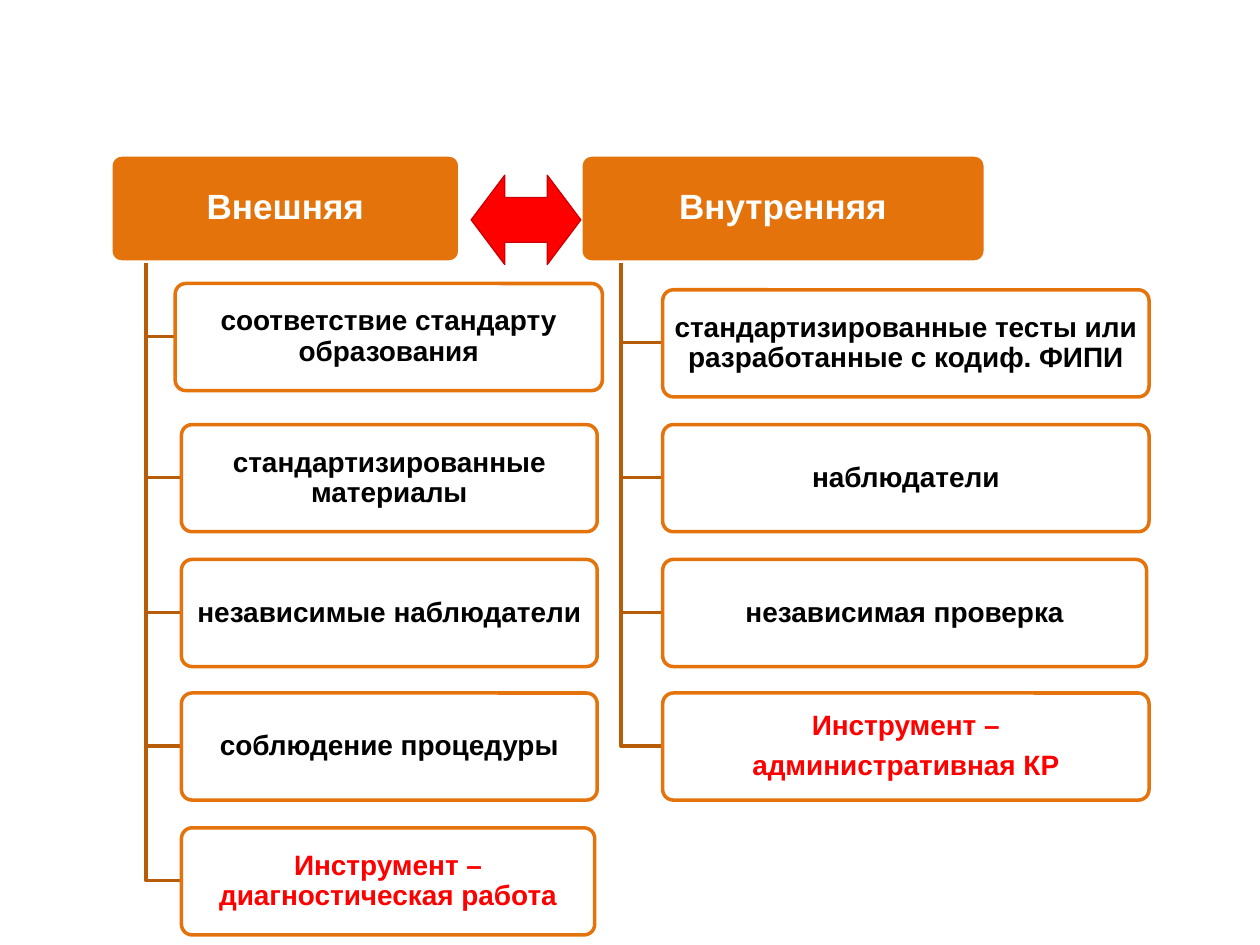
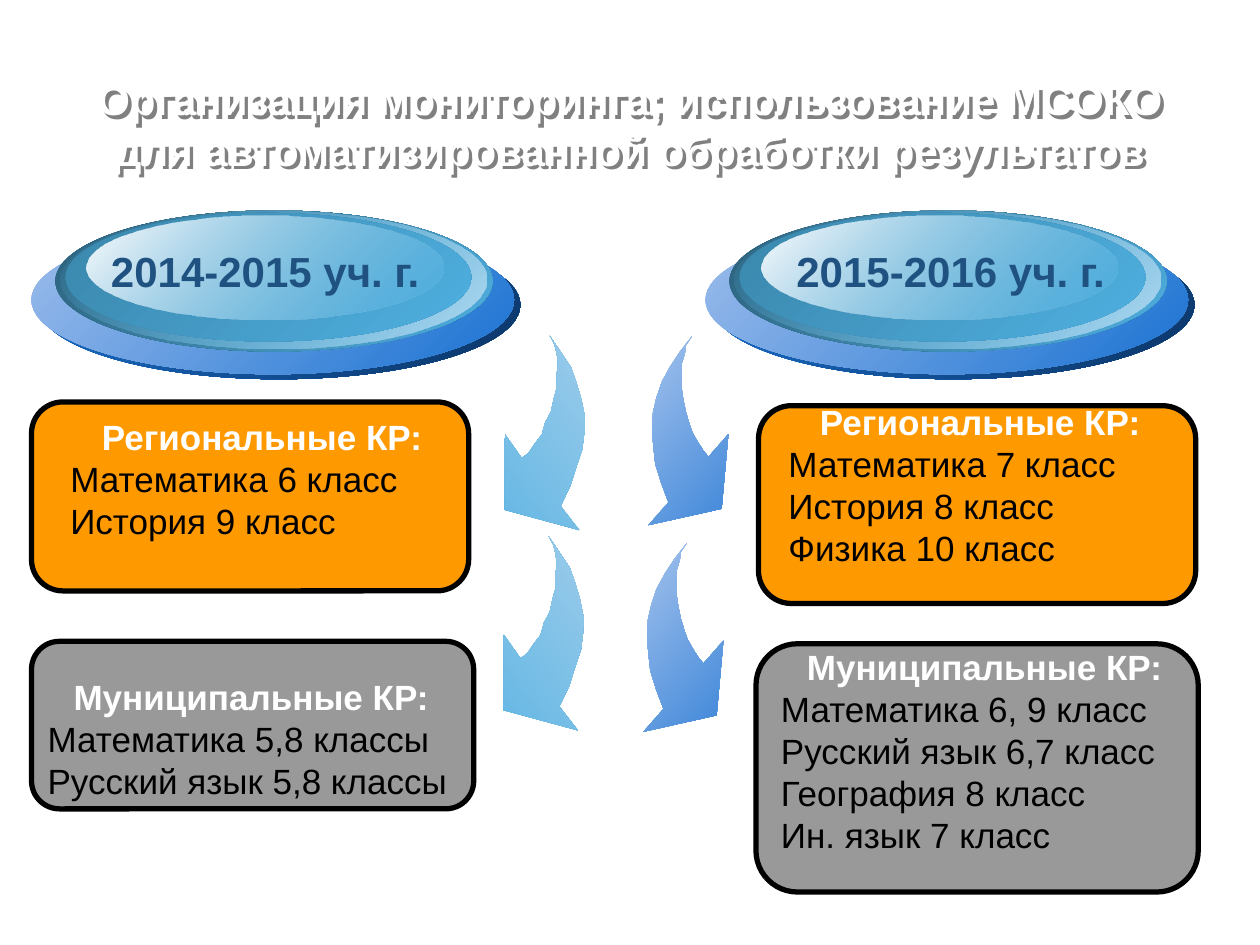
import math

from lxml import etree
from pptx import Presentation, util as u
from pptx.dml.color import RGBColor
from pptx.enum import shapes, text
from pptx.oxml import ns

PX = 9144
FACE = "Arial"
HUE = {
    "white": "FFFFFF", "black": "000000", "red": "FF0000", "rim": "CC0000",
    "orange": "E5730B", "stem": "B75C09", "amber": "FF9900", "grey": "999999",
    "navy": "1F5281", "shade": "808080", "sky": "4FB0E1", "pale": "ADD1ED",
    "mist": "C0D2F2", "deep": "1A72D2", "dark": "0C3566",
    "haze": "9DBDEC", "teal": "2A5E78", "ice": "B5DBF0", "sea": "3A86AB",
}
KIND = shapes.MSO_SHAPE
MID = text.PP_ALIGN.CENTER
LEFT = text.PP_ALIGN.LEFT

RINGS = [
    ((5, 16, 383, 118), ("deep", 100), ("dark", 100)),
    ((0, 12, 383, 118), ("haze", 100), ("deep", 100)),
    ((19, 0, 347, 112), ("teal", 100), ("sky", 100)),
    ((23, 0, 338, 110), ("sky", 0), ("ice", 100)),
    ((27, 2, 322, 102), ("sea", 100), ("sky", 100)),
    ((44, 4, 283, 83), ("white", 100), ("sky", 38)),
]
CURVE_L = [
    (35, 0), (45, 13), (52, 25), (57, 37), (61, 50), (63, 63), (63, 76),
    (61, 90), (57, 104), (52, 119), (44, 135), (59, 154), (0, 138), (0, 78),
    (14, 97), (19, 92), (24, 85), (29, 78), (32, 69), (36, 60), (38, 51),
    (41, 41), (41, 31), (42, 22), (41, 14), (39, 6),
]
CURVE_R = [
    (34, 0), (24, 12), (16, 24), (10, 35), (6, 48), (3, 60), (2, 73),
    (3, 86), (5, 100), (10, 115), (16, 131), (0, 149), (58, 136), (63, 77),
    (47, 95), (43, 90), (39, 84), (35, 76), (32, 68), (29, 59), (27, 49),
    (26, 40), (26, 30), (26, 21), (28, 13), (30, 6),
]


def tint(name):
    """Return a named colour."""
    return RGBColor.from_string(HUE[name])


def scale(box):
    """Turn px lengths into EMU."""
    return [u.Emu(n * PX) for n in box]


def style(para, size, hue, bold=True, align=MID):
    """Format one paragraph."""
    para.alignment = align
    font = para.font
    font.name, font.size, font.bold = FACE, u.Pt(size), bold
    font.color.rgb = tint(hue)


def paint(shape, fill=None, line=None, width=1):
    """Set plain fill and line, without shadow."""
    shape.shadow.inherit = False
    if fill:
        shape.fill.solid()
        shape.fill.fore_color.rgb = tint(fill)
    else:
        shape.fill.background()
    if line:
        shape.line.color.rgb = tint(line)
        shape.line.width = u.Pt(width)
    else:
        shape.line.fill.background()


def blend(shape, first, last, angle):
    """Give a shape a linear gradient of two (colour, opacity) stops."""
    paint(shape)
    grad = etree.Element(ns.qn("a:gradFill"), rotWithShape="1")
    stops = etree.SubElement(grad, ns.qn("a:gsLst"))
    for pos, (name, alpha) in ((0, first), (100000, last)):
        stop = etree.SubElement(stops, ns.qn("a:gs"), pos=str(pos))
        clr = etree.SubElement(stop, ns.qn("a:srgbClr"), val=HUE[name])
        if alpha < 100:
            etree.SubElement(clr, ns.qn("a:alpha"), val=str(alpha * 1000))
    etree.SubElement(grad, ns.qn("a:lin"), ang=str(angle * 60000), scaled="0")
    props = shape._element.spPr
    props.replace(props.find(ns.qn("a:noFill")), grad)


def block(slide, kind, box, fill, line, width, *adjust):
    """Add a preset shape."""
    shape = slide.shapes.add_shape(kind, *scale(box))
    for i, val in enumerate(adjust):
        shape.adjustments[i] = val
    paint(shape, fill, line, width)
    return shape


def trace(slide, x, y, points, closed):
    """Add an outline whose points are relative to x, y."""
    path = [(x + dx, y + dy) for dx, dy in points]
    pen = slide.shapes.build_freeform(*path[0], scale=float(PX))
    pen.add_line_segments(path[1:], close=closed)
    return pen.convert_to_shape()


def swoop(slide, x, y, curve, mid, turn, first, last):
    """Add a curved arrow as a turned shape with a gradient along it."""
    cos, sin = math.cos(math.radians(turn)), math.sin(math.radians(turn))
    flat = []
    for px, py in curve:
        dx, dy = px - mid[0], py - mid[1]
        flat.append((mid[0] + dx * cos + dy * sin,
                     mid[1] - dx * sin + dy * cos))
    arrow = trace(slide, x, y, flat, True)
    arrow.rotation = turn
    blend(arrow, (first, 100), (last, 100), 0)


def title(slide, box, words):
    """Place the white title and put a grey shadow behind it."""
    head = slide.shapes.title
    head.left, head.top, head.width, head.height = scale(box)
    frame = head.text_frame
    frame.text = words
    frame.word_wrap = True
    frame.vertical_anchor = text.MSO_ANCHOR.MIDDLE
    style(frame.paragraphs[0], 24, "white")
    paint(head)
    effects = head._element.spPr.find(ns.qn("a:effectLst"))
    drop = etree.SubElement(effects, ns.qn("a:outerShdw"), dist="35921",
                            dir="2700000", algn="ctr", rotWithShape="0")
    etree.SubElement(drop, ns.qn("a:srgbClr"), val=HUE["shade"])


def label(slide, box, words, size, fill, line, hue):
    """Add a rounded box with centred bold text."""
    shape = block(slide, KIND.ROUNDED_RECTANGLE, box, fill, line, 2, 0.1)
    frame = shape.text_frame
    frame.word_wrap = True
    frame.vertical_anchor = text.MSO_ANCHOR.MIDDLE
    frame.margin_left = frame.margin_right = u.Emu(6 * PX)
    frame.margin_top = frame.margin_bottom = u.Emu(4 * PX)
    frame.text = words
    for para in frame.paragraphs:
        para.line_spacing = 0.9
        para.space_after = u.Pt(size * 0.35)
        style(para, size, hue)


def branch(slide, x, width, stem, head, leaves):
    """Draw a heading and the boxes that hang from it."""
    top, high, pitch = 123, 85, 106.7
    label(slide, (x, top, width, high), head, 20, "orange", "white", "white")
    for i, (left, wide, lift, words) in enumerate(leaves):
        y = round(337 + (i - 1) * pitch) - lift
        base = top + high + 1
        drop = y + high // 2 - base
        elbow = [(0, 0), (0, drop), (left - stem, drop)]
        paint(trace(slide, stem, base, elbow, False), None, "stem", 2)
        hue = "red" if i == len(leaves) - 1 else "black"
        label(slide, (left, y, wide, high), words, 16, "white", "orange", hue)


def badge(slide, x, y, dx, year):
    """Stack the glossy ovals and write the year on them."""
    for (left, top, wide, high), first, last in RINGS:
        oval = slide.shapes.add_shape(
            KIND.OVAL, *scale((x + left, y + top, wide, high)))
        blend(oval, first, last, 45)
    note(slide, (x + dx, y + 23, 325, 50), [year], 24, "navy")


def note(slide, box, lines, size, hue):
    """Write a bold centred heading over plain lines."""
    frame = slide.shapes.add_textbox(*scale(box)).text_frame
    frame.word_wrap = True
    frame.text = "\n".join(lines)
    head, *rest = frame.paragraphs
    style(head, size, hue)
    for para in rest:
        style(para, size, "black", False, LEFT)


def card(slide, box, fill, shift, width, lines):
    """Add a framed card with its list, shifted from its corner."""
    block(slide, KIND.ROUNDED_RECTANGLE, box, fill, "black", 3, 0.167)
    x, y = box[0] + shift[0], box[1] + shift[1]
    note(slide, (x, y, width, 10 + 34 * len(lines)), lines, 20, "white")


def terms(slide):
    """Build the slide of outer and inner assessment."""
    branch(slide, 88, 277, 116, "Внешняя", [
        (139, 339, 5, "соответствие стандарту образования"),
        (144, 330, 0, "стандартизированные материалы"),
        (144, 330, 0, "независимые наблюдатели"),
        (144, 330, 0, "соблюдение процедуры"),
        (144, 328, 0, "Инструмент – диагностическая работа"),
    ])
    branch(slide, 461, 321, 493, "Внутренняя", [
        (526, 386, 0, "стандартизированные тесты или разработанные с кодиф. ФИПИ"),
        (526, 386, 0, "наблюдатели"),
        (526, 384, 0, "независимая проверка"),
        (526, 386, 0, "Инструмент –\nадминистративная КР"),
    ])
    block(slide, KIND.LEFT_RIGHT_ARROW, (374, 139, 87, 71), "red", "rim",
          0.75, 0.5, 0.376)


def years(slide):
    """Build the slide comparing two school years."""
    title(slide, (0, 56, 1000, 85),
          "Организация мониторинга; использование МСОКО\v"
          "для автоматизированной обработки результатов")
    badge(slide, 25, 167, 23, "2014-2015 уч. г.")
    badge(slide, 560, 167, 32, "2015-2016 уч. г.")
    area, town = "Региональные КР:", "Муниципальные КР:"
    card(slide, (25, 319, 347, 150), "amber", (21, 6), 324,
         [area, "Математика 6 класс", "История 9 класс"])
    card(slide, (25, 509, 351, 133), "grey", (3, 22), 343,
         [town, "Математика 5,8 классы", "Русский язык 5,8 классы"])
    card(slide, (602, 322, 347, 157), "amber", (14, -9), 324,
         [area, "Математика 7 класс", "История 8 класс", "Физика 10 класс"])
    card(slide, (600, 511, 351, 197), "grey", (10, -4), 343,
         [town, "Математика 6, 9 класс", "Русский язык 6,7 класс",
          "География 8 класс", "Ин. язык 7 класс"])
    for x, y in ((401, 267), (400, 426)):
        swoop(slide, x, y, CURVE_L, (33, 88), 322.2, "sky", "pale")
    for x, y in ((515, 267), (511, 431)):
        swoop(slide, x, y, CURVE_R, (31, 86), 41.3, "mist", "deep")


def main():
    """Build and save the slides."""
    deck = Presentation()
    deck.slide_width, deck.slide_height = scale((1000, 750))
    for build, layout in ((terms, 6), (years, 5)):
        build(deck.slides.add_slide(deck.slide_layouts[layout]))
    deck.save("out.pptx")


if __name__ == "__main__":
    main()
